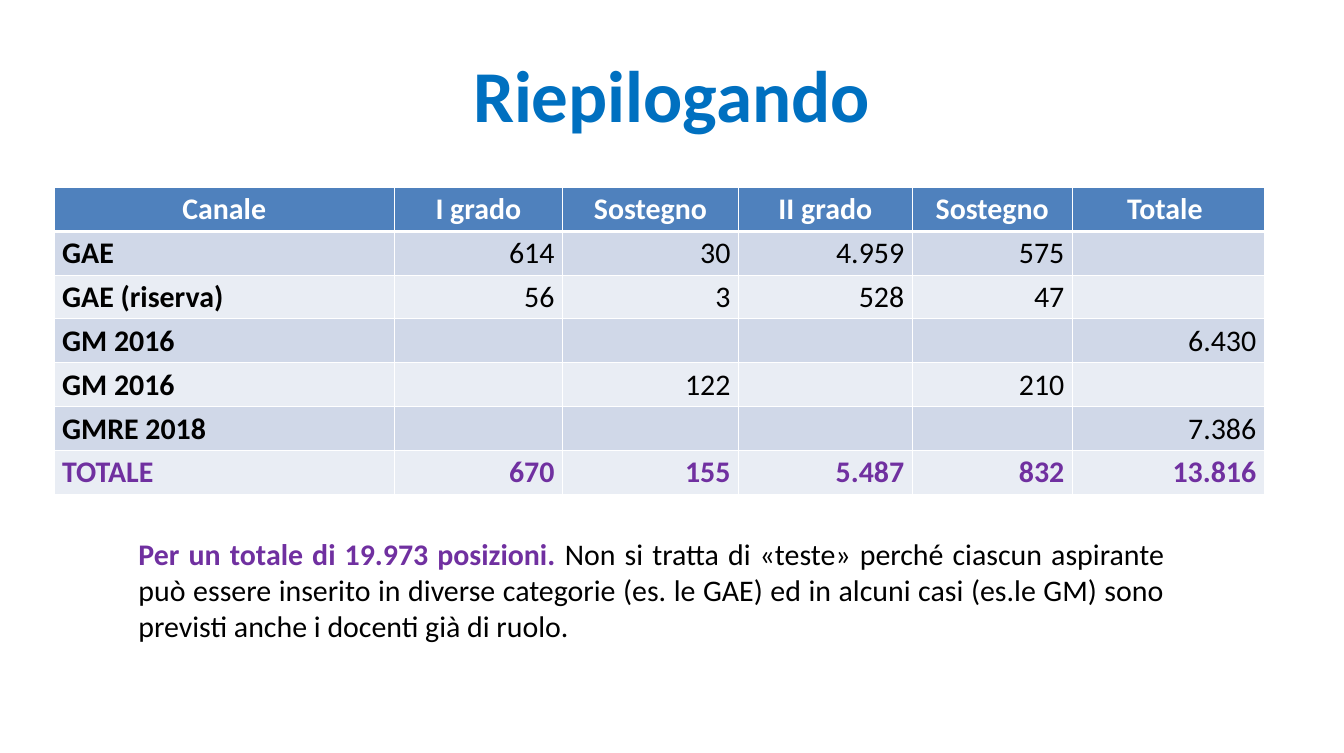
from lxml.etree import SubElement
from pptx import Presentation
from pptx.dml.color import RGBColor
from pptx.enum.text import MSO_ANCHOR, PP_ALIGN
from pptx.oxml.ns import qn
from pptx.util import Inches, Pt

WHITE = RGBColor(0xFF, 0xFF, 0xFF)
BLACK = RGBColor(0x00, 0x00, 0x00)
BLUE = RGBColor(0x00, 0x70, 0xC0)
PURPLE = RGBColor(0x70, 0x30, 0xA0)
HEADER_FILL = RGBColor(0x4F, 0x81, 0xBD)
BAND_FILLS = (RGBColor(0xE9, 0xED, 0xF4), RGBColor(0xD0, 0xD8, 0xE8))

COLUMN_WIDTHS = (4.27, 2.11, 2.21, 2.18, 2.01, 2.41)
ROW_HEIGHT = 0.55
ROWS = (
    ("Canale", "I grado", "Sostegno", "II grado", "Sostegno", "Totale "),
    ("GAE", "614", "30", "4.959", "575", ""),
    ("GAE (riserva)", "56", "3", "528", "47", ""),
    ("GM 2016", "", "", "", "", "6.430"),
    ("GM 2016", "", "122", "", "210", ""),
    ("GMRE 2018", "", "", "", "", "7.386"),
    ("TOTALE", "670", "155", "5.487", "832", "13.816"),
)


class SlideBuilder:
    """Adds styled text and tables to one slide."""

    font_name = "Calibri"
    body_size = 27

    def __init__(self, slide):
        self.slide = slide

    def add_span(self, para, text, color, bold=False, size=body_size):
        span = para.add_run()
        span.text = text
        span.font.name = self.font_name
        span.font.size = Pt(size)
        span.font.bold = bold
        span.font.color.rgb = color

    def add_text(self, left, top, width, height, align, spans, anchor=MSO_ANCHOR.TOP):
        box = self.slide.shapes.add_textbox(
            Inches(left), Inches(top), Inches(width), Inches(height))
        frame = box.text_frame
        frame.word_wrap = True
        frame.vertical_anchor = anchor
        para = frame.paragraphs[0]
        para.alignment = align
        for span in spans:
            self.add_span(para, *span)

    def add_borders(self, cell, bottom_width):
        properties = cell._tc.get_or_add_tcPr()
        for side, width in (("L", 1), ("R", 1), ("T", 1), ("B", bottom_width)):
            line = SubElement(properties, qn(f"a:ln{side}"), w=str(Pt(width)))
            fill = SubElement(line, qn("a:solidFill"))
            SubElement(fill, qn("a:srgbClr"), val=str(WHITE))

    def add_cell(self, cell, text, fill, color, bold, align, bottom_width):
        self.add_borders(cell, bottom_width)
        cell.fill.solid()
        cell.fill.fore_color.rgb = fill
        if text:
            para = cell.text_frame.paragraphs[0]
            para.alignment = align
            self.add_span(para, text, color, bold)

    def add_summary_table(self, left, top, rows, widths, row_height):
        table = self.slide.shapes.add_table(
            len(rows), len(widths), Inches(left), Inches(top),
            Inches(sum(widths)), Inches(row_height * len(rows))).table
        for column, width in zip(table.columns, widths):
            column.width = Inches(width)
        for row_index, values in enumerate(rows):
            table.rows[row_index].height = Inches(row_height)
            is_header = row_index == 0
            is_total = row_index == len(rows) - 1
            fill = HEADER_FILL if is_header else BAND_FILLS[row_index % 2]
            color = WHITE if is_header else PURPLE if is_total else BLACK
            bottom_width = 3 if is_header else 1
            for column_index, text in enumerate(values):
                is_label = column_index == 0
                bold = is_header or is_total or is_label
                align = PP_ALIGN.LEFT if is_label else PP_ALIGN.RIGHT
                if is_header:
                    align = PP_ALIGN.CENTER
                self.add_cell(table.cell(row_index, column_index), text, fill,
                              color, bold, align, bottom_width)


def main():
    deck = Presentation()
    deck.slide_width = Inches(16.87)
    deck.slide_height = Inches(9.45)
    page = SlideBuilder(deck.slides.add_slide(deck.slide_layouts[6]))

    page.add_text(0.84, 0.38, 15.18, 1.57, PP_ALIGN.CENTER,
                  [("Riepilogando", BLUE, True, 66)], MSO_ANCHOR.MIDDLE)
    page.add_summary_table(0.68, 2.35, ROWS, COLUMN_WIDTHS, ROW_HEIGHT)
    page.add_text(1.64, 6.67, 13.07, 1.46, PP_ALIGN.JUSTIFY, [
        ("Per un totale di 19.973 posizioni. ", PURPLE, True),
        ("Non si tratta di «teste» perché ciascun aspirante può essere inserito "
         "in diverse categorie (es. le GAE) ed in alcuni casi (es.le GM) sono "
         "previsti anche i docenti già di ruolo.", BLACK),
    ])
    deck.save("out.pptx")


if __name__ == "__main__":
    main()
